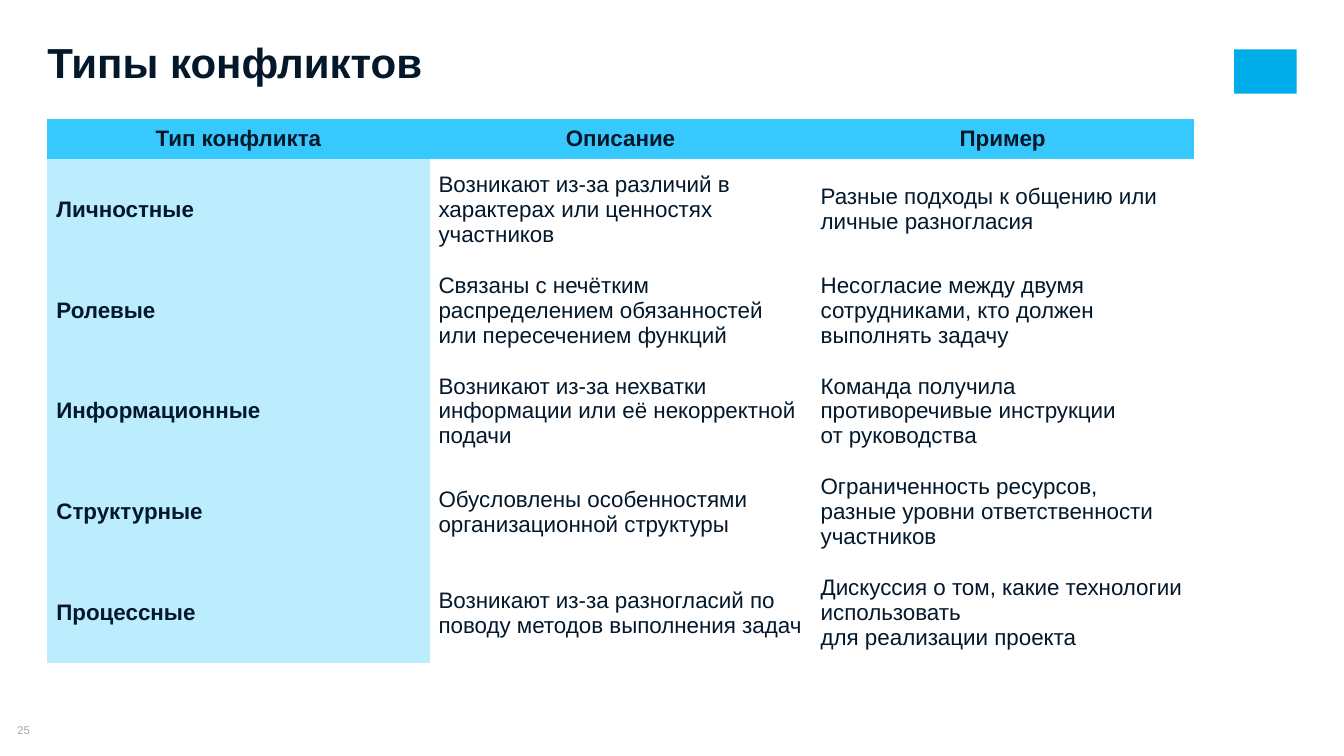
from dataclasses import dataclass
from typing import Any

from pptx import Presentation, util as u
from pptx.dml.color import RGBColor
from pptx.enum import shapes, text
from pptx.oxml import ns

NAVY = RGBColor(0x03, 0x18, 0x2B)
GREY = RGBColor(0xA6, 0xA6, 0xA6)
ACCENT = RGBColor(0x00, 0xAD, 0xEB)
HEADER_BLUE = RGBColor(0x37, 0xC9, 0xFE)
TYPE_BLUE = RGBColor(0xBC, 0xED, 0xFF)

FONT = "Arial"
NO_GRID_STYLE = "{2D5ABB26-0587-4C30-8999-92F81FD0307C}"
LEFT = text.PP_ALIGN.LEFT
CENTER = text.PP_ALIGN.CENTER
TOP = text.MSO_ANCHOR.TOP
MIDDLE = text.MSO_ANCHOR.MIDDLE


@dataclass(frozen=True)
class TextStyle:
    size: float
    color: RGBColor = NAVY
    bold: bool = False
    align: text.PP_ALIGN = LEFT
    line_spacing: float = 1.0


@dataclass(frozen=True)
class Label:
    words: str
    box: tuple[float, float, float, float]
    style: TextStyle
    anchor: text.MSO_ANCHOR


@dataclass(frozen=True)
class Conflict:
    kind: str
    description: str
    example: str


HEADER_STYLE = TextStyle(16, bold=True, align=CENTER)
KIND_STYLE = TextStyle(16, bold=True)
BODY_STYLE = TextStyle(16)

LABELS = [
    Label("25", (0, 7.18, 0.47, 0.13), TextStyle(8, GREY, align=CENTER), MIDDLE),
    Label("Типы конфликтов", (0.47, 0.46, 10.51, 0.41),
          TextStyle(30, bold=True, line_spacing=0.8), TOP),
]

HEADINGS = ("Тип конфликта", "Описание", "Пример")
CONFLICTS = [
    Conflict("Личностные",
             "Возникают из-за различий в характерах или ценностях участников",
             "Разные подходы к общению или личные разногласия"),
    Conflict("Ролевые",
             "Связаны с нечётким распределением обязанностей или пересечением функций",
             "Несогласие между двумя сотрудниками, кто должен выполнять задачу"),
    Conflict("Информационные",
             "Возникают из-за нехватки информации или её некорректной подачи",
             "Команда получила противоречивые инструкции \nот руководства"),
    Conflict("Структурные",
             "Обусловлены особенностями организационной структуры",
             "Ограниченность ресурсов, \nразные уровни ответственности участников"),
    Conflict("Процессные",
             "Возникают из-за разногласий по поводу методов выполнения задач",
             "Дискуссия о том, какие технологии использовать \nдля реализации проекта"),
]
COLUMN_WIDTH = 3.79
HEADER_HEIGHT = 0.4
ROW_HEIGHT = 1.0


def apply_format(target: Any, values: dict[str, Any]) -> None:
    for name, value in values.items():
        setattr(target, name, value)


def write(paragraph: Any, words: str, style: TextStyle) -> None:
    paragraph.text = words
    apply_format(paragraph, {"alignment": style.align, "line_spacing": style.line_spacing})
    for run in paragraph.runs:
        apply_format(run.font, {"name": FONT, "size": u.Pt(style.size), "bold": style.bold})
        run.font.color.rgb = style.color


def add_label(slide: Any, label: Label) -> None:
    frame = slide.shapes.add_textbox(*map(u.Inches, label.box)).text_frame
    apply_format(frame, {
        "word_wrap": True, "vertical_anchor": label.anchor,
        "margin_left": 0, "margin_top": 0, "margin_right": 0, "margin_bottom": 0,
    })
    write(frame.paragraphs[0], label.words, label.style)


def add_emblem(slide: Any) -> None:
    """Put a plain block in the top right corner."""
    emblem = slide.shapes.add_shape(
        shapes.MSO_SHAPE.RECTANGLE, *map(u.Inches, (12.24, 0.49, 0.62, 0.44)))
    emblem.shadow.inherit = False
    emblem.fill.solid()
    emblem.fill.fore_color.rgb = ACCENT
    emblem.line.fill.background()


def fill_cell(cell: Any, words: str, style: TextStyle, fill: RGBColor | None) -> None:
    apply_format(cell, {
        "vertical_anchor": MIDDLE,
        "margin_left": u.Inches(0.09), "margin_right": u.Inches(0.09),
        "margin_top": u.Inches(0.04), "margin_bottom": u.Inches(0.04),
    })
    if fill is None:
        cell.fill.background()
    else:
        cell.fill.solid()
        cell.fill.fore_color.rgb = fill
    write(cell.text_frame.paragraphs[0], words, style)


def add_conflict_table(slide: Any) -> None:
    width = COLUMN_WIDTH * len(HEADINGS)
    height = HEADER_HEIGHT + ROW_HEIGHT * len(CONFLICTS)
    frame = slide.shapes.add_table(
        len(CONFLICTS) + 1, len(HEADINGS),
        *map(u.Inches, (0.47, 1.18, width, height)))
    for style_id in frame.element.iter(ns.qn("a:tableStyleId")):
        style_id.text = NO_GRID_STYLE

    table = frame.table
    for column in table.columns:
        column.width = u.Inches(COLUMN_WIDTH)
    for index, row in enumerate(table.rows):
        row.height = u.Inches(ROW_HEIGHT if index else HEADER_HEIGHT)

    for column, heading in enumerate(HEADINGS):
        fill_cell(table.cell(0, column), heading, HEADER_STYLE, HEADER_BLUE)
    for row, conflict in enumerate(CONFLICTS, start=1):
        fill_cell(table.cell(row, 0), conflict.kind, KIND_STYLE, TYPE_BLUE)
        fill_cell(table.cell(row, 1), conflict.description, BODY_STYLE, None)
        fill_cell(table.cell(row, 2), conflict.example, BODY_STYLE, None)


def main() -> None:
    deck = Presentation()
    apply_format(deck, {"slide_width": u.Inches(13.33), "slide_height": u.Inches(7.5)})
    slide = deck.slides.add_slide(deck.slide_layouts[6])
    add_emblem(slide)
    for label in LABELS:
        add_label(slide, label)
    add_conflict_table(slide)
    deck.save("out.pptx")


if __name__ == "__main__":
    main()
